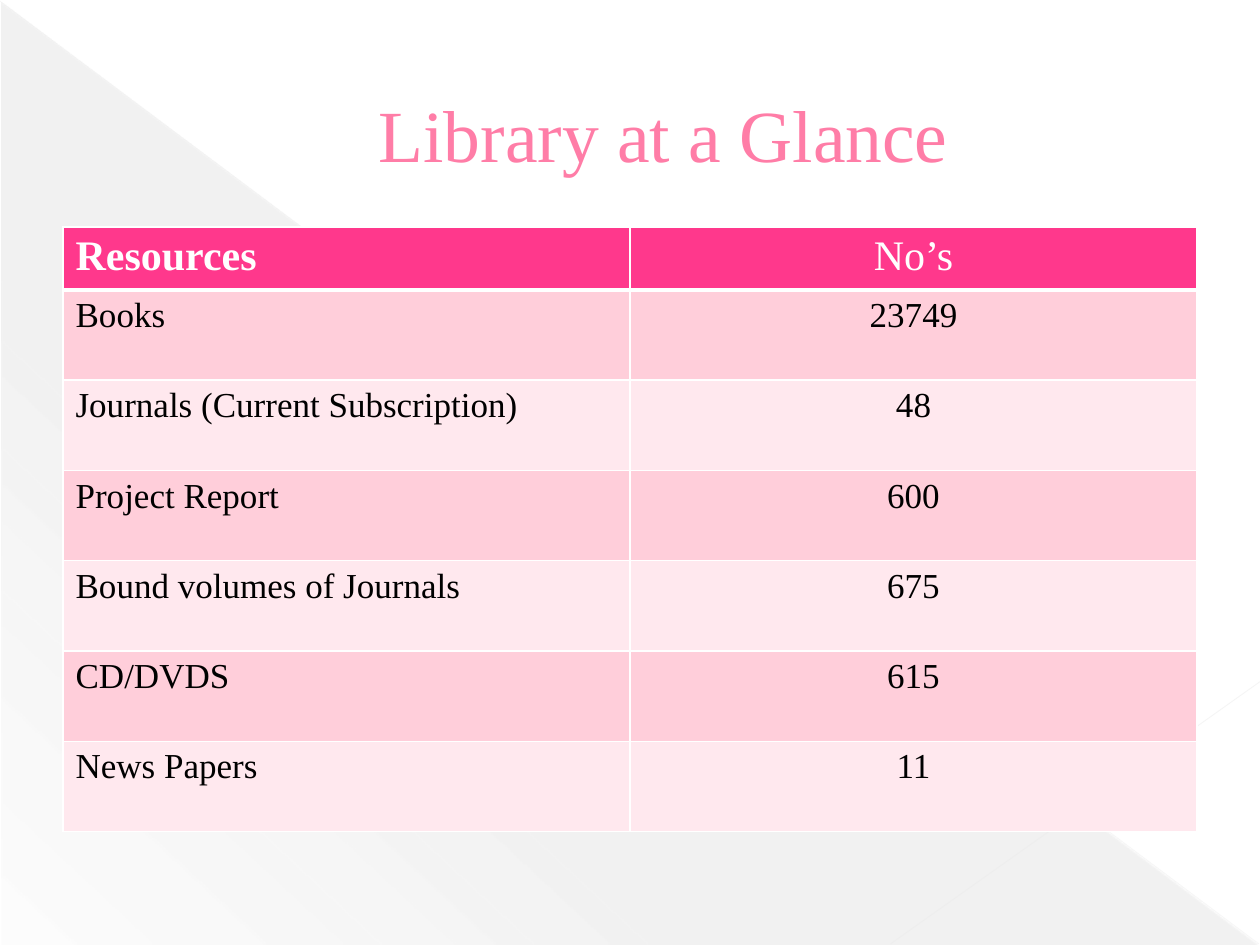
from dataclasses import dataclass

from lxml import etree
from pptx import Presentation
from pptx.dml.color import RGBColor
from pptx.enum import shapes, text
from pptx.oxml import ns, parse_xml
from pptx.util import Pt

COLORS = {
    "title": "FF7DA7",
    "header": "FF388C",
    "odd": "FFCEDA",
    "even": "FFE8EE",
    "white": "FFFFFF",
    "black": "000000",
    "shade": "666666",
    "falling": "E8E8E8",
    "rising": "EAEAEA",
}
FONT = "Times New Roman"
SHADE_STOPS = ((0, 10), (70, 8), (100, 1))
SHADE_ANGLE = 133


@dataclass
class Ray:
    start: tuple[float, float]
    end: tuple[float, float]
    color: str
    width: float
    opacity: int


@dataclass
class Resource:
    label: str
    count: str


RAYS = [
    Ray((0, 0.72), (719.28, 539.28), "falling", 0.39, 35),
    Ray((720, 389.52), (509.04, 539.28), "rising", 0.47, 45),
]
HEADING = Resource("Resources", "No’s")
RESOURCES = [
    Resource("Books", "23749"),
    Resource("Journals (Current Subscription)", "48"),
    Resource("Project Report", "600"),
    Resource("Bound volumes of Journals", "675"),
    Resource("CD/DVDS", "615"),
    Resource("News Papers", "11"),
]


def rgb(color: str) -> RGBColor:
    return RGBColor.from_string(COLORS[color])


def style(paragraph, size: float, color: str, bold: bool = False) -> None:
    for run in paragraph.runs:
        run.font.name = FONT
        run.font.size = Pt(size)
        run.font.bold = bold
        run.font.color.rgb = rgb(color)


def draw_shade(slide) -> None:
    shade = slide.shapes.add_shape(
        shapes.MSO_SHAPE.RIGHT_TRIANGLE, Pt(0.72), Pt(1.44), Pt(718.56), Pt(538.56)
    )
    shade.shadow.inherit = False
    shade.line.fill.background()
    stops = "".join(
        f'<a:gs pos="{position * 1000}"><a:srgbClr val="{COLORS["shade"]}">'
        f'<a:alpha val="{opacity * 1000}"/></a:srgbClr></a:gs>'
        for position, opacity in SHADE_STOPS
    )
    gradient = parse_xml(
        f'<a:gradFill {ns.nsdecls("a")} rotWithShape="1"><a:gsLst>{stops}</a:gsLst>'
        f'<a:lin ang="{SHADE_ANGLE * 60000}" scaled="0"/></a:gradFill>'
    )
    shade._element.spPr.find(ns.qn("a:prstGeom")).addnext(gradient)


def draw_ray(slide, ray: Ray) -> None:
    line = slide.shapes.add_connector(
        shapes.MSO_CONNECTOR.STRAIGHT, *map(Pt, ray.start + ray.end)
    )
    line.line.width = Pt(ray.width)
    line.line.color.rgb = rgb(ray.color)
    properties = line._element.spPr
    tint = properties.find(".//" + ns.qn("a:srgbClr"))
    etree.SubElement(tint, ns.qn("a:alpha"), val=str(ray.opacity * 1000))
    etree.SubElement(properties, ns.qn("a:effectLst"))


def draw_title(slide, wording: str) -> None:
    title = slide.shapes.add_textbox(Pt(36), Pt(20.88), Pt(648), Pt(110.16))
    frame = title.text_frame
    frame.word_wrap = True
    frame.vertical_anchor = text.MSO_ANCHOR.MIDDLE
    frame.text = wording
    heading = frame.paragraphs[0]
    heading.alignment = text.PP_ALIGN.CENTER
    heading._p.get_or_add_pPr().set("marL", str(Pt(38.16)))
    style(heading, 42, "title")


def draw_borders(cell, bottom: float) -> None:
    properties = cell._tc.get_or_add_tcPr()
    widths = {"lnL": 1, "lnR": 1, "lnT": 1, "lnB": bottom}
    for index, (side, width) in enumerate(widths.items()):
        border = parse_xml(
            f'<a:{side} {ns.nsdecls("a")} w="{Pt(width)}"><a:solidFill>'
            f'<a:srgbClr val="{COLORS["white"]}"/></a:solidFill></a:{side}>'
        )
        properties.insert(index, border)


def draw_table(slide, heading: Resource, resources: list[Resource]) -> None:
    entries = [heading, *resources]
    table = slide.shapes.add_table(
        len(entries), 2, Pt(36), Pt(129.6), Pt(648), Pt(344)
    ).table
    for index, entry in enumerate(entries):
        is_header = index == 0
        table.rows[index].height = Pt(34.4 if is_header else 51.6)
        fill = "header" if is_header else "odd" if index % 2 else "even"
        for column, wording in enumerate((entry.label, entry.count)):
            cell = table.cell(index, column)
            cell.fill.solid()
            cell.fill.fore_color.rgb = rgb(fill)
            draw_borders(cell, 3 if is_header or False else 1)
            if index == 1:
                cell._tc.tcPr.find(ns.qn("a:lnT")).set("w", str(Pt(3)))
            cell.text_frame.text = wording
            paragraph = cell.text_frame.paragraphs[0]
            if column:
                paragraph.alignment = text.PP_ALIGN.CENTER
            if is_header:
                style(paragraph, 24, "white", bold=column == 0)
            else:
                style(paragraph, 20, "black")


def main() -> None:
    """Build the library resources slide."""
    deck = Presentation()
    deck.slide_width, deck.slide_height = Pt(720), Pt(540)
    slide = deck.slides.add_slide(deck.slide_layouts[6])
    draw_shade(slide)
    for ray in RAYS:
        draw_ray(slide, ray)
    draw_title(slide, "Library at a Glance")
    draw_table(slide, HEADING, RESOURCES)
    deck.save("out.pptx")


if __name__ == "__main__":
    main()
